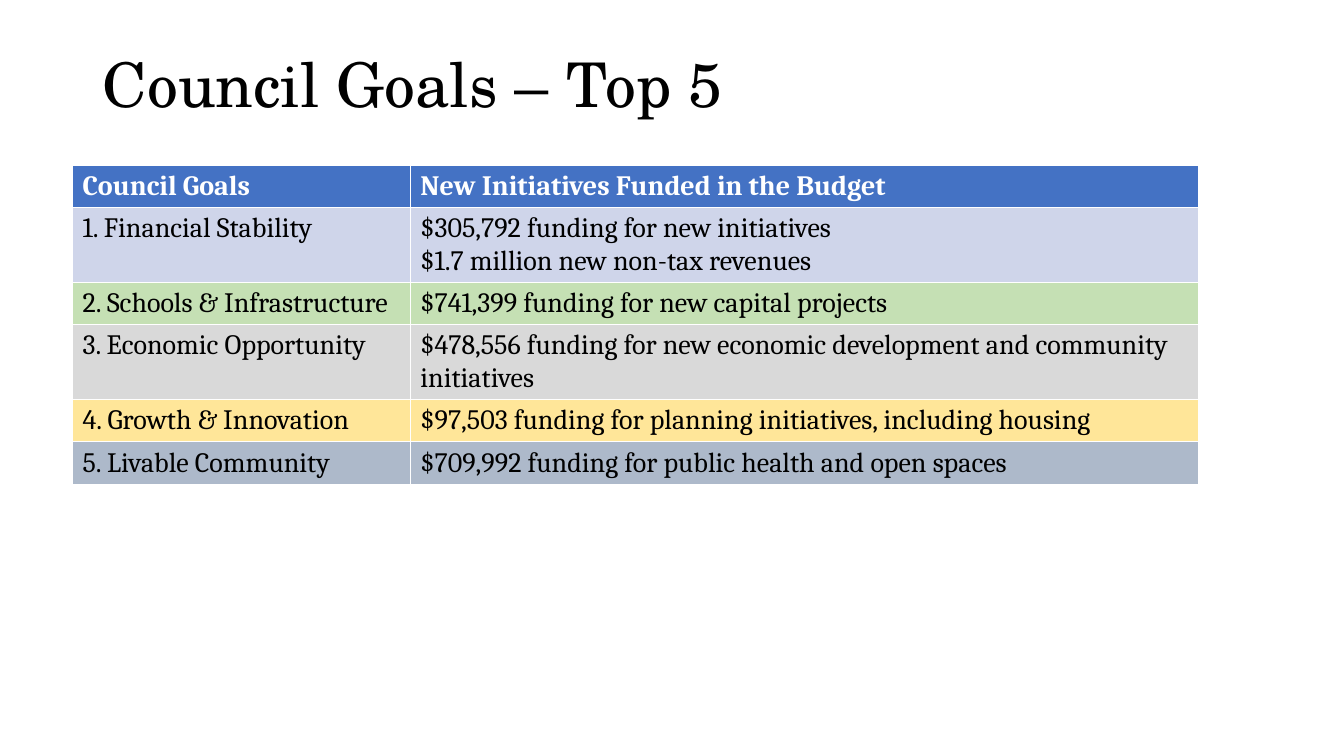
"""Build the slide that lists the top five council goals and their funding."""
from dataclasses import dataclass

from pptx import Presentation
from pptx import util as u
from pptx.dml import color as dml
from pptx.enum import text


@dataclass
class Goal:
    name: str
    lines: list[str]
    fill: str
    ink: str = "000000"
    bold: bool = False


GOALS = [
    Goal("Council Goals", ["New Initiatives Funded in the Budget"], "4472C4", "FFFFFF", True),
    Goal("1. Financial Stability",
         ["$305,792 funding for new initiatives", "$1.7 million new non-tax revenues"], "CFD5EA"),
    Goal("2. Schools & Infrastructure", ["$741,399 funding for new capital projects"], "C5E0B4"),
    Goal("3. Economic Opportunity",
         ["$478,556 funding for new economic development and community initiatives"], "D9D9D9"),
    Goal("4. Growth & Innovation",
         ["$97,503 funding for planning initiatives, including housing"], "FFE699"),
    Goal("5. Livable Community", ["$709,992 funding for public health and open spaces"], "ADB9CA"),
]
WIDTHS = [3.35, 7.82]
HEIGHTS = [0.42, 0.74, 0.42, 0.74, 0.42, 0.42]


def paint(form, tone: str) -> None:
    if hasattr(form, "solid"):
        form.solid()
        form.fore_color.rgb = dml.RGBColor.from_string(tone)
    else:
        form.rgb = dml.RGBColor.from_string(tone)


def add_run(para, words: str, face: str, size: float, ink: str, bold: bool = False) -> None:
    run = para.add_run()
    run.text = words
    run.font.name = face
    run.font.size = u.Pt(size)
    run.font.bold = bold
    paint(run.font.color, ink)


def fill_cell(cell, lines: list[str], goal: Goal) -> None:
    paint(cell.fill, goal.fill)
    frame = cell.text_frame
    for i, line in enumerate(lines):
        para = frame.add_paragraph() if i else frame.paragraphs[0]
        add_run(para, line, "Cambria", 20, goal.ink, goal.bold)


def add_title(slide, words: str) -> None:
    title = slide.shapes.title
    title.left, title.top = u.Inches(0.92), u.Inches(0.4)
    title.width, title.height = u.Inches(11.5), u.Inches(0.93)
    frame = title.text_frame
    frame.auto_size = text.MSO_AUTO_SIZE.NONE
    frame.vertical_anchor = text.MSO_ANCHOR.MIDDLE
    para = frame.paragraphs[0]
    para.alignment = text.PP_ALIGN.LEFT
    para.line_spacing = 0.9
    add_run(para, words, "TeX Gyre Schola", 44, "000000")


def add_goals(slide, goals: list[Goal]) -> None:
    frame = slide.shapes.add_table(
        len(goals), len(WIDTHS), u.Inches(0.72), u.Inches(1.64),
        u.Inches(sum(WIDTHS)), u.Inches(sum(HEIGHTS)))
    table = frame.table
    table.horz_banding = False
    for col, width in zip(table.columns, WIDTHS):
        col.width = u.Inches(width)
    for row, height, goal in zip(table.rows, HEIGHTS, goals):
        row.height = u.Inches(height)
        fill_cell(row.cells[0], [goal.name], goal)
        fill_cell(row.cells[1], goal.lines, goal)


def main() -> None:
    deck = Presentation()
    deck.slide_width, deck.slide_height = u.Inches(13.33), u.Inches(7.5)
    slide = deck.slides.add_slide(deck.slide_layouts[5])
    add_title(slide, "Council Goals – Top 5")
    add_goals(slide, GOALS)
    deck.save("out.pptx")


if __name__ == "__main__":
    main()
